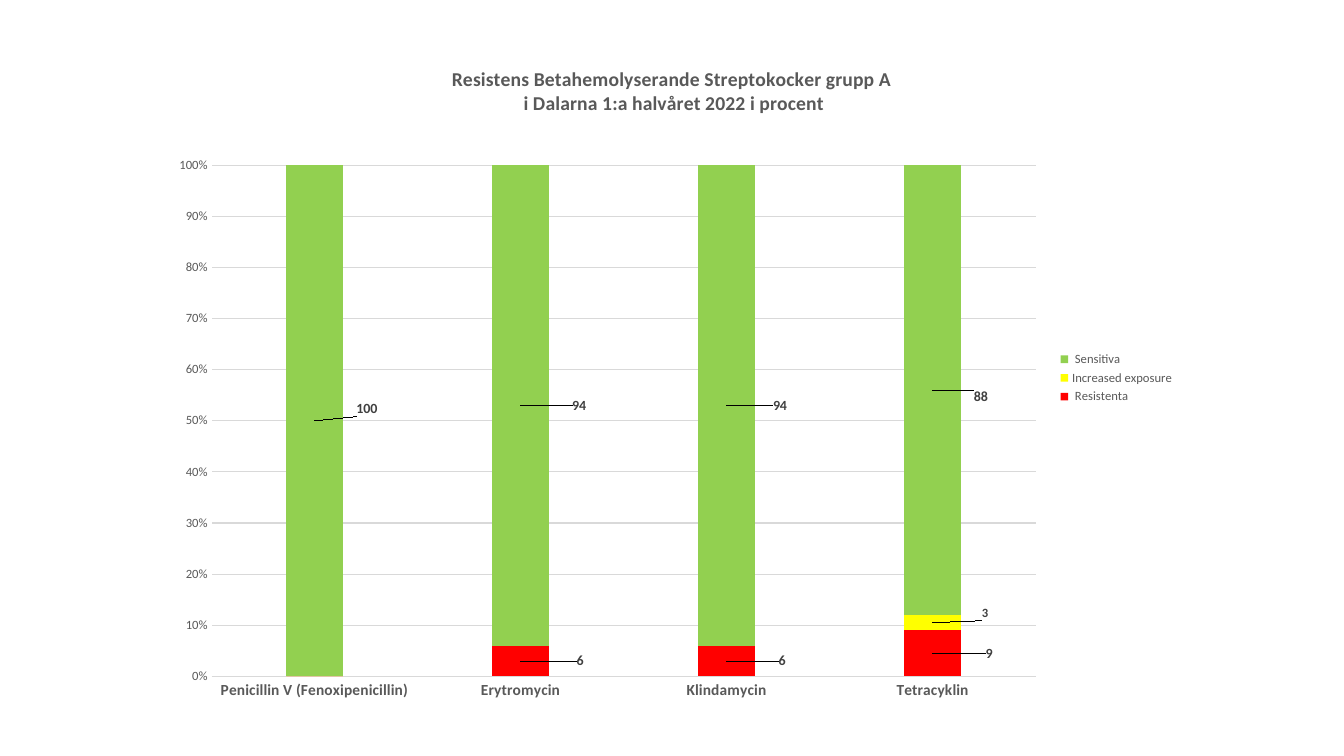
from lxml import etree
from pptx import Presentation
from pptx.chart.data import CategoryChartData
from pptx.dml.color import RGBColor
from pptx.enum.chart import XL_CHART_TYPE as ChartType
from pptx.enum.chart import XL_LEGEND_POSITION as LegendPosition
from pptx.enum.chart import XL_TICK_MARK as TickMark
from pptx.oxml.ns import qn
from pptx.util import Pt

COLORS = {
    "resistant": "FF0000",
    "increased": "FFFF00",
    "sensitive": "92D050",
    "text": "595959",
    "label": "404040",
    "grid": "D9D9D9",
}
DRUGS = ["Penicillin V (Fenoxipenicillin)", "Erytromycin", "Klindamycin", "Tetracyklin"]
TITLE = ["Resistens Betahemolyserande Streptokocker grupp A",
         " i Dalarna 1:a halvåret 2022 i procent"]
SERIES = [
    (" Resistenta", "resistant", [0, 6, 6, 9], 10,
     {1: (0.058, 0), 2: (0.054, 0), 3: (0.055, 0)}),
    ("Increased exposure", "increased", [0, 0, 0, 3], 9,
     {3: (0.051, -0.014)}),
    (" Sensitiva", "sensitive", [100, 94, 94, 88], 10,
     {0: (0.051, -0.018), 1: (0.057, 0), 2: (0.052, 0), 3: (0.047, 0.01)}),
]


def style_font(font, size, color, bold=False):
    font.name = "Calibri"
    font.size = Pt(size)
    font.bold = bold
    font.color.rgb = RGBColor.from_string(COLORS[color])


def make_layout(**settings):
    layout = etree.Element(qn("c:layout"))
    manual = etree.SubElement(layout, qn("c:manualLayout"))
    for name, value in settings.items():
        etree.SubElement(manual, qn(f"c:{name}"), val=str(value))
    return layout


deck = Presentation()
deck.slide_width = Pt(960)
deck.slide_height = Pt(540)
page = deck.slides.add_slide(deck.slide_layouts[6])

data = CategoryChartData(number_format="0")
data.categories = DRUGS
for name, color, values, size, offsets in SERIES:
    data.add_series(name, values)
chart = page.shapes.add_chart(
    ChartType.COLUMN_STACKED_100, Pt(113.8), Pt(31), Pt(732.2), Pt(478), data
).chart
style_font(chart.font, 10, "text")

chart.has_title = True
chart.chart_title.include_in_layout = False
title_frame = chart.chart_title.text_frame
title_frame.text = "\n".join(TITLE)
for para in title_frame.paragraphs:
    style_font(para.font, 14, "text", True)

chart.has_legend = True
chart.legend.position = LegendPosition.RIGHT
chart.legend.include_in_layout = False
style_font(chart.legend.font, 9, "text")

drug_axis = chart.category_axis
drug_axis.major_tick_mark = TickMark.NONE
drug_axis.format.line.color.rgb = RGBColor.from_string(COLORS["grid"])
drug_axis.format.line.width = Pt(0.75)
style_font(drug_axis.tick_labels.font, 11, "text", True)

percent_axis = chart.value_axis
percent_axis.major_tick_mark = TickMark.NONE
percent_axis.major_unit = 0.1
percent_axis.format.line.fill.background()
percent_axis.tick_labels.number_format = "0%"
percent_axis.tick_labels.number_format_is_linked = False
style_font(percent_axis.tick_labels.font, 9, "text")
gridlines = percent_axis.major_gridlines.format.line
gridlines.color.rgb = RGBColor.from_string(COLORS["grid"])
gridlines.width = Pt(0.75)

plot = chart.plots[0]
plot.gap_width = 266
plot.overlap = 100
plot.vary_by_categories = False
for series, (name, color, values, size, offsets) in zip(plot.series, SERIES):
    series.format.fill.solid()
    series.format.fill.fore_color.rgb = RGBColor.from_string(COLORS[color])
    series.data_labels.show_value = False
    for index, (across, down) in offsets.items():
        style_font(series.points[index].data_label.font, size, "label", True)
    for label in series.data_labels._element.findall(qn("c:dLbl")):
        index_element = label.find(qn("c:idx"))
        across, down = offsets[int(index_element.get("val"))]
        index_element.addnext(make_layout(x=across, y=down))

plot_area = chart._chartSpace.chart.plotArea
for old_layout in plot_area.findall(qn("c:layout")):
    plot_area.remove(old_layout)
plot_area.insert(0, make_layout(
    layoutTarget="inner", xMode="edge", yMode="edge", x=0.051, y=0.182, w=0.804, h=0.764
))

deck.save("out.pptx")
